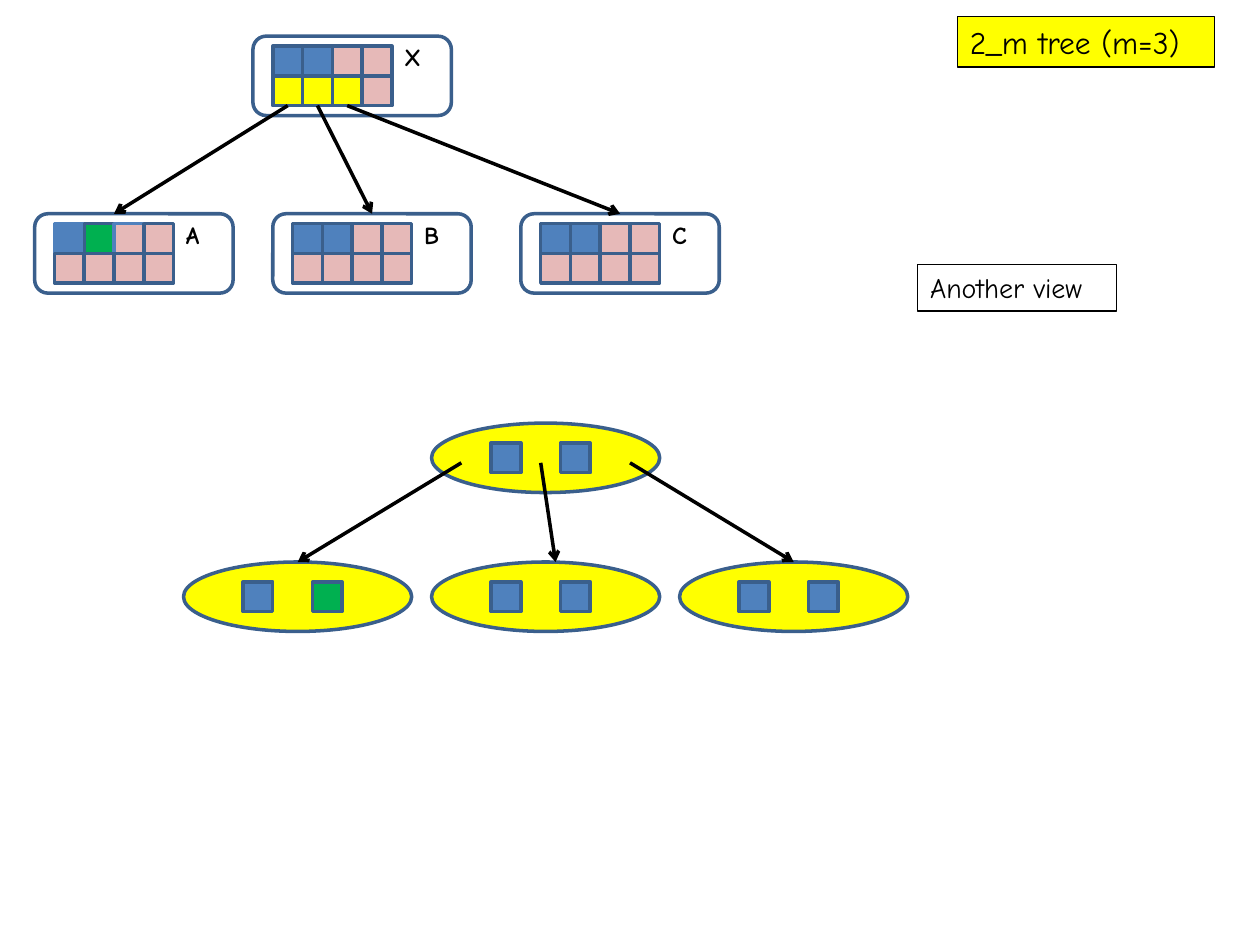
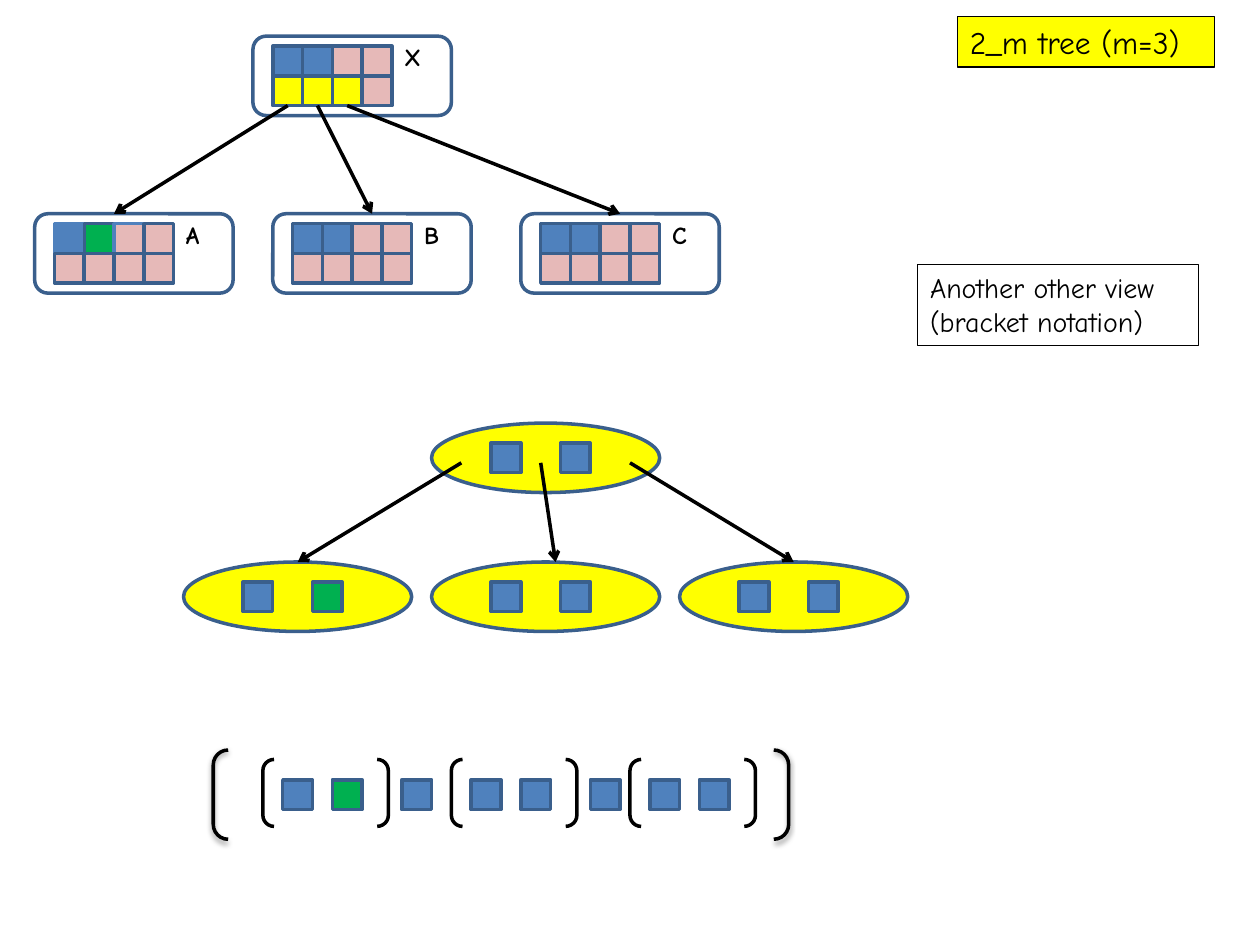
import pptx
import pptx.dml.color
import pptx.enum.shapes
import pptx.oxml
import pptx.oxml.ns
import pptx.util
from pptx.util import Cm

SHAPES = pptx.enum.shapes.MSO_SHAPE
FONT = "Comic Neue"
BLACK, WHITE, YELLOW = "000000", "FFFFFF", "FFFF00"
BLUE, GREEN, PINK, EDGE = "4F81BD", "00B050", "E6B9B8", "3A5F8C"

# Cell code: (fill, outline)
CELLS = {
    "B": (BLUE, EDGE), "G": (GREEN, EDGE), "P": (PINK, EDGE), "Y": (YELLOW, EDGE),
    "b": (BLUE, BLUE), "p": (PINK, BLUE),
}
CELL = 0.6
NODE_WIDTH, NODE_HEIGHT = 4, 1.6
ROOT_TOP, CHILD_TOP = 0.73, 4.31
OVAL_WIDTH, OVAL_HEIGHT = 4.6, 1.4
OVAL_ROOT_TOP, OVAL_CHILD_TOP = 8.53, 11.33
BRACKET_WIDTH, BRACKET_HEIGHT = 2.53, 1.35
BRACKET_TOP, KEY_TOP = 15.31, 15.72


def colour(hex_text):
    return pptx.dml.color.RGBColor.from_string(hex_text)


def paint(shape, fill, line, width):
    if fill:
        shape.fill.solid()
        shape.fill.fore_color.rgb = colour(fill)
    else:
        shape.fill.background()
    shape.line.color.rgb = colour(line)
    shape.line.width = pptx.util.Pt(width)


def add_shape(slide, kind, left, top, width, height, fill=None, line=EDGE):
    shape = slide.shapes.add_shape(kind, Cm(left), Cm(top), Cm(width), Cm(height))
    shape.shadow.inherit = False
    paint(shape, fill, line, 2)
    return shape


def add_cell(slide, code, left, top):
    fill, line = CELLS[code]
    return add_shape(slide, SHAPES.RECTANGLE, left, top, CELL, CELL, fill, line)


def add_text(slide, lines, left, top, width, height, size, bold=False):
    box = slide.shapes.add_textbox(Cm(left), Cm(top), Cm(width), Cm(height))
    frame = box.text_frame
    frame.word_wrap = not bold
    frame.text = "\n".join(lines)
    for paragraph in frame.paragraphs:
        paragraph.font.name = FONT
        paragraph.font.size = pptx.util.Pt(size)
        paragraph.font.bold = bold
        paragraph.font.color.rgb = colour(BLACK)
    return box


def add_arrow(slide, start, end):
    arrow = slide.shapes.add_connector(
        pptx.enum.shapes.MSO_CONNECTOR.STRAIGHT, *(Cm(value) for value in start + end))
    arrow.line.color.rgb = colour(BLACK)
    arrow.line.width = pptx.util.Pt(2)
    namespace = pptx.oxml.ns.nsdecls("a")
    arrow.line._get_or_add_ln().append(
        pptx.oxml.parse_xml(f'<a:tailEnd {namespace} type="arrow"/>'))
    arrow._element.spPr.append(pptx.oxml.parse_xml(f"<a:effectLst {namespace}/>"))
    return arrow


def add_node(slide, label, rows, left, top):
    """Draw a labelled node; return its frame and its rows of cells."""
    frame = add_shape(slide, SHAPES.ROUNDED_RECTANGLE, left, top, NODE_WIDTH, NODE_HEIGHT)
    cells = [
        [add_cell(slide, code, left + 0.4 + column * CELL, top + 0.2 + row * CELL)
         for column, code in enumerate(codes)]
        for row, codes in enumerate(rows)
    ]
    add_text(slide, [label], left + 2.8, top, 0.86, 0.86, 14, bold=True)
    return frame, cells


def add_array_tree(slide):
    _, root_cells = add_node(slide, "X", ["BBPP", "YYYP"], 5.1, ROOT_TOP)
    children = [("A", "bGpP", 0.7), ("B", "BBPP", 5.5), ("C", "BBPP", 10.5)]
    for pointer, (label, keys, left) in zip(root_cells[1], children):
        frame, _ = add_node(slide, label, [keys, "PPPP"], left, CHILD_TOP)
        arrow = add_arrow(slide, (0, 0), (2.3, CHILD_TOP))
        arrow.begin_connect(pointer, 2)
        if label != "A":
            arrow.end_connect(frame, 0)


def add_oval_node(slide, keys, left, top):
    add_shape(slide, SHAPES.OVAL, left, top, OVAL_WIDTH, OVAL_HEIGHT, YELLOW)
    for index, code in enumerate(keys):
        add_cell(slide, code, left + 1.2 + index * 1.4, top + 0.4)


def add_oval_tree(slide):
    add_oval_node(slide, "BB", 8.7, OVAL_ROOT_TOP)
    for index, keys in enumerate(["BG", "BB", "BB"]):
        add_oval_node(slide, keys, 3.7 + index * 5, OVAL_CHILD_TOP)
    for start, end in [(9.3, 6), (10.9, 11.2), (12.7, 16)]:
        add_arrow(slide, (start, 9.33), (end, OVAL_CHILD_TOP))


def add_soft_shadow(shape):
    effects = shape._element.spPr.find(pptx.oxml.ns.qn("a:effectLst"))
    effects.append(pptx.oxml.parse_xml(
        f'<a:outerShdw {pptx.oxml.ns.nsdecls("a")} blurRad="40000" dist="20000" '
        'dir="5400000" rotWithShape="0"><a:srgbClr val="000000">'
        '<a:alpha val="38000"/></a:srgbClr></a:outerShdw>'))


def add_bracket_notation(slide):
    for left, keys in [(5.3, "BG"), (9.1, "BB"), (12.7, "BB")]:
        add_shape(slide, SHAPES.DOUBLE_BRACKET, left, BRACKET_TOP,
                  BRACKET_WIDTH, BRACKET_HEIGHT, WHITE, BLACK)
        for index, code in enumerate(keys):
            add_cell(slide, code, left + 0.4 + index, KEY_TOP)
    for left in (8.1, 11.9):
        add_cell(slide, "B", left, KEY_TOP)
    outer = add_shape(slide, SHAPES.DOUBLE_BRACKET, 4.3, 15.12, 11.6, 1.8, line=BLACK)
    add_soft_shadow(outer)


def add_tree_slide(presentation, note, note_width, note_height):
    """Add a slide with the title, a note and both drawings of the tree."""
    slide = presentation.slides.add_slide(presentation.slide_layouts[6])
    title_box = add_text(slide, ["2_m tree (m=3)"], 19.3, 0.33, 5.18, 1.02, 18)
    paint(title_box, YELLOW, BLACK, 0.75)
    note_box = add_text(slide, note, 18.5, 5.33, note_width, note_height, 16)
    paint(note_box, None, BLACK, 0.75)
    add_array_tree(slide)
    add_oval_tree(slide)
    return slide


def main():
    presentation = pptx.Presentation()
    presentation.slide_width = Cm(25.4)
    presentation.slide_height = Cm(19.05)
    add_tree_slide(presentation, ["Another view"], 4.01, 0.94)
    slide = add_tree_slide(
        presentation, ["Another other view", "(bracket notation)"], 5.66, 1.63)
    add_bracket_notation(slide)
    presentation.save("out.pptx")


if __name__ == "__main__":
    main()
